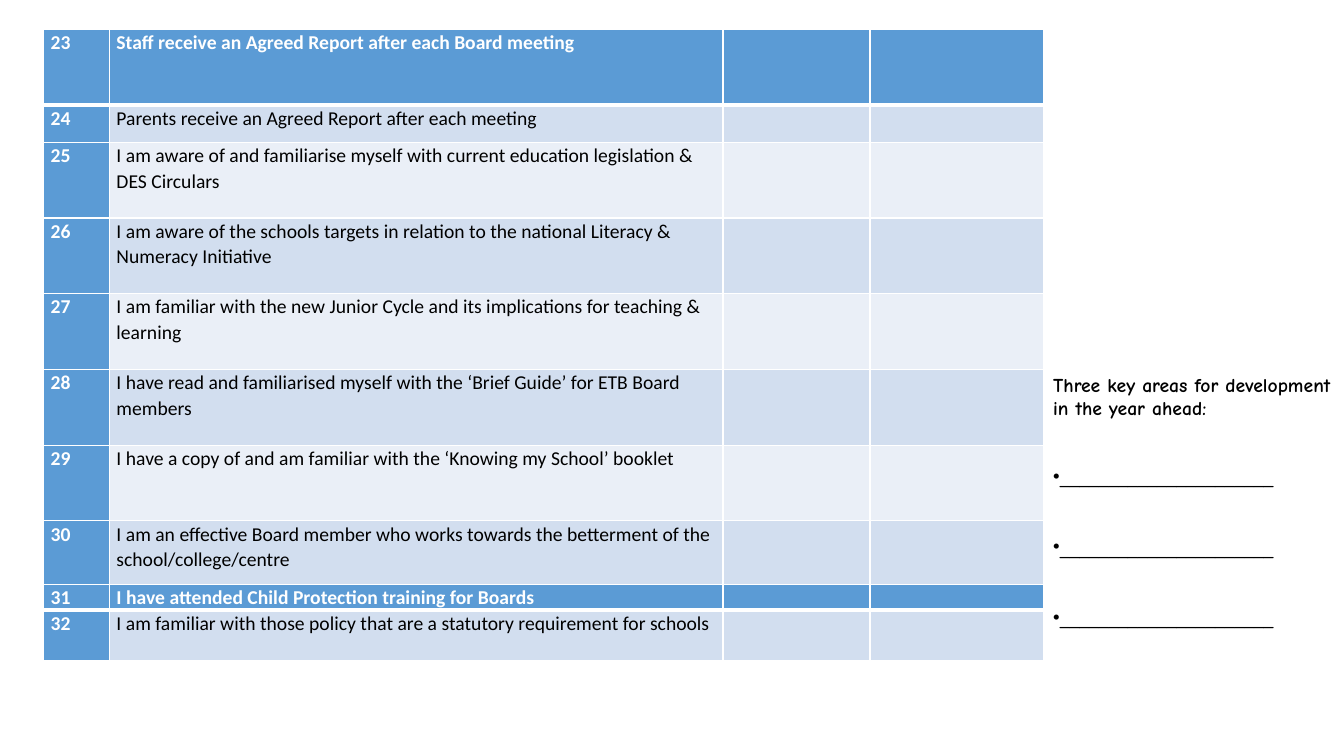
from lxml.etree import SubElement
from pptx import Presentation
from pptx.dml.color import RGBColor
from pptx.enum.text import MSO_AUTO_SIZE
from pptx.oxml.ns import qn
from pptx.util import Pt

WHITE = RGBColor(0xFF, 0xFF, 0xFF)
BLACK = RGBColor(0, 0, 0)
BLUE = RGBColor(0x5B, 0x9B, 0xD5)
BANDS = [RGBColor(0xEA, 0xEF, 0xF7), RGBColor(0xD2, 0xDE, 0xEF)]

LEFT = 31
COL_WIDTHS = [47, 438.5, 105, 123.7]
STATEMENTS = [
    "Staff receive an Agreed Report after each Board meeting",
    "Parents receive an Agreed Report after each meeting",
    "I am aware of and familiarise myself with current education legislation & DES Circulars",
    "I am aware of the schools targets in relation to the national Literacy & Numeracy Initiative",
    "I am familiar with the new Junior Cycle and its implications for teaching & learning",
    "I have read and familiarised myself with the ‘Brief Guide’ for ETB Board members",
    "I have a copy of and am familiar with the ‘Knowing my School’ booklet",
    "I am an effective Board member who works towards the betterment of the school/college/centre",
]
LAST_STATEMENTS = [
    "I have attended Child Protection training for Boards",
    "I am familiar with those policy that are a statutory requirement for schools",
]


def set_borders(cell, bottom):
    tcPr = cell._tc.get_or_add_tcPr()
    for side, width in (("lnL", 1), ("lnR", 1), ("lnT", 1), ("lnB", bottom)):
        ln = SubElement(tcPr, qn(f"a:{side}"), w=str(Pt(width)))
        fill = SubElement(ln, qn("a:solidFill"))
        SubElement(fill, qn("a:srgbClr"), val=str(WHITE))


def add_checklist(slide, top, first_number, statements, heights):
    """Add a numbered table with a header row and two empty answer columns."""
    table = slide.shapes.add_table(len(statements), len(COL_WIDTHS), Pt(LEFT), Pt(top),
                                   Pt(sum(COL_WIDTHS)), Pt(sum(heights))).table
    for column, width in zip(table.columns, COL_WIDTHS):
        column.width = Pt(width)
    for i, (statement, height) in enumerate(zip(statements, heights)):
        table.rows[i].height = Pt(height)
        for j, text in enumerate([str(first_number + i), statement, "", ""]):
            cell = table.cell(i, j)
            strong = i == 0 or j == 0
            set_borders(cell, 3 if i == 0 else 1)
            cell.fill.solid()
            cell.fill.fore_color.rgb = BLUE if strong else BANDS[i % 2]
            cell.margin_left = cell.margin_right = Pt(5.2)
            cell.margin_top = cell.margin_bottom = 0
            p = cell.text_frame.paragraphs[0]
            p.line_spacing = 1.07
            p.font.name = "Calibri"
            p.font.size = Pt(14)
            p.font.bold = strong
            p.font.color.rgb = WHITE if strong else BLACK
            if text:
                p.add_run().text = text
            else:
                SubElement(p._p, qn("a:endParaRPr"), sz="1400")


prs = Presentation()
prs.slide_width, prs.slide_height = Pt(960), Pt(540)
slide = prs.slides.add_slide(prs.slide_layouts[6])

add_checklist(slide, 21, 23, STATEMENTS, [54, 26.6] + [54.1] * 6)

tf = slide.shapes.add_textbox(Pt(745.2), Pt(262.8), Pt(214.8), Pt(211)).text_frame
tf.word_wrap = True
tf.auto_size = MSO_AUTO_SIZE.SHAPE_TO_FIT_TEXT
lines = ["Three key areas for development in the year ahead:"] + ["_" * 22] * 3
for i, line in enumerate(lines):
    p = tf.add_paragraph() if i else tf.paragraphs[0]
    p.add_run().text = line
    p.font.name = "Comic Neue"
    p.font.size = Pt(14)
    p.font.bold = i == 0
    p.font.color.rgb = BLACK
    if i:
        p.line_spacing = 3.0
        pPr = p._p.get_or_add_pPr()
        bullet = pPr.makeelement(qn("a:buChar"), {"char": "•"})
        pPr.find(qn("a:defRPr")).addprevious(bullet)

add_checklist(slide, 417.6, 31, LAST_STATEMENTS, [17.6, 36])

prs.save("out.pptx")
